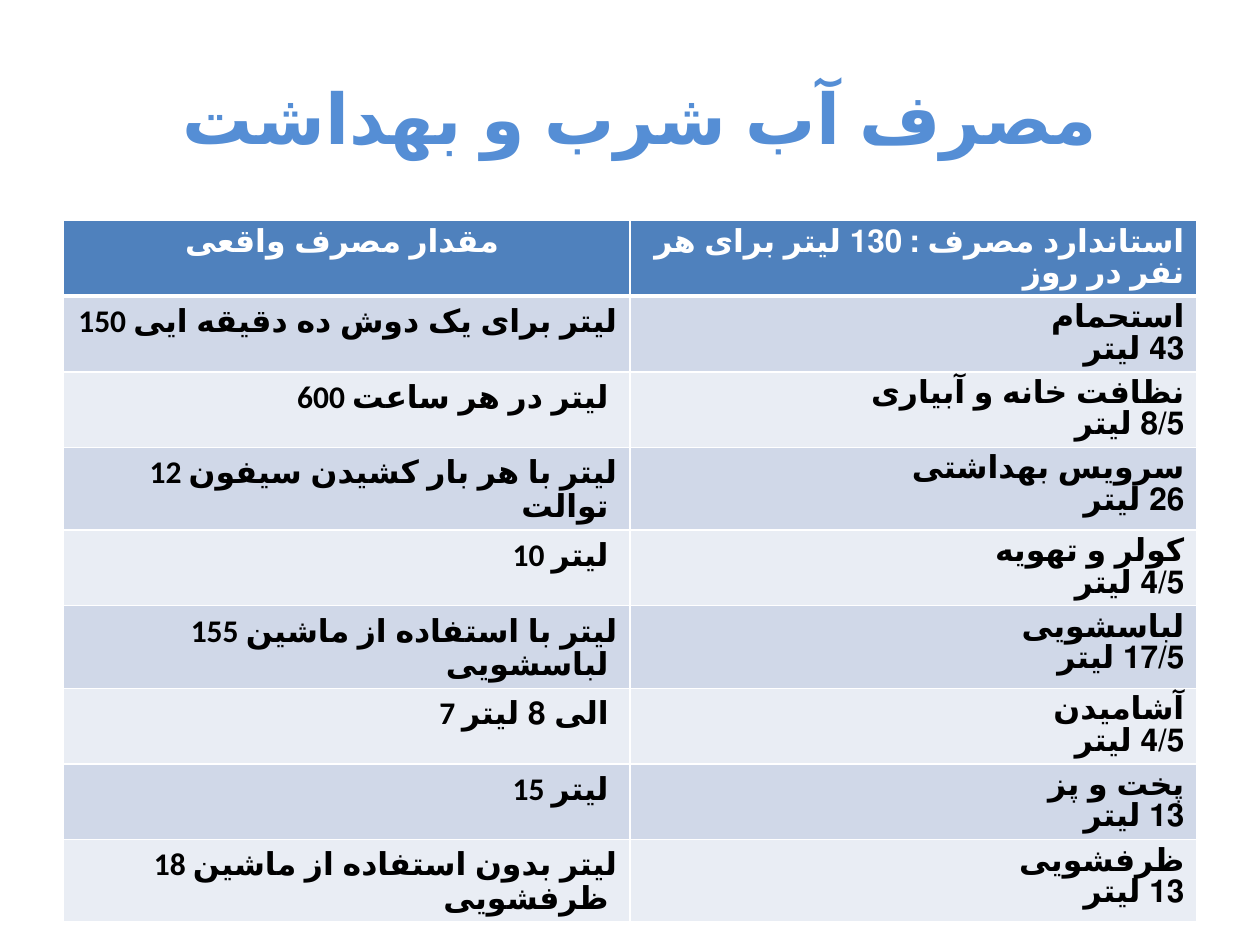
import pptx
import pptx.dml.color
import pptx.enum.lang
import pptx.enum.text
import pptx.oxml
import pptx.oxml.ns
import pptx.util

Pt = pptx.util.Pt
ALIGN = pptx.enum.text.PP_ALIGN
FARSI = pptx.enum.lang.MSO_LANGUAGE_ID.FARSI
FONT = "Calibri"
WHITE, BLACK = "FFFFFF", "000000"
TITLE_BLUE, HEADER_BLUE = "558ED5", "4F81BD"
BANDS = ("D0D8E8", "E9EDF4")

# Actual use, then the standard use of the same activity
HEADER = ("مقدار مصرف واقعی ", "استاندارد مصرف : 130 لیتر برای هر نفر در روز ")
USES = [
    ("150 لیتر برای یک دوش ده دقیقه ایی ", "استحمام", "43 لیتر"),
    ("600 لیتر در هر ساعت ", "نظافت خانه و آبیاری", "8/5 لیتر"),
    ("12 لیتر با هر بار کشیدن سیفون توالت ", "سرویس بهداشتی", "26 لیتر"),
    ("10 لیتر ", "کولر و تهویه", "4/5 لیتر"),
    ("155 لیتر با استفاده از ماشین لباسشویی ", "لباسشویی", "17/5 لیتر"),
    ("7 الی 8 لیتر ", "آشامیدن", "4/5 لیتر"),
    ("15 لیتر ", "پخت و پز", "13 لیتر"),
    ("18 لیتر بدون استفاده از ماشین ظرفشویی ", "ظرفشویی", "13 لیتر"),
]


def color(value):
    return pptx.dml.color.RGBColor.from_string(value)


def write(paragraph, text, size, ink, align, rtl=False):
    paragraph.text = text
    paragraph.alignment = align
    if rtl:
        paragraph._p.get_or_add_pPr().set("rtl", "1")
    font = paragraph.font
    font.name, font.size, font.bold = FONT, Pt(size), True
    font.color.rgb = color(ink)
    # The language steers the choice of Persian letterforms
    for run in paragraph.runs:
        run.font.language_id = FARSI


def add_border(cell, side, width):
    cell._tc.get_or_add_tcPr().append(pptx.oxml.parse_xml(
        f'<a:ln{side} {pptx.oxml.ns.nsdecls("a")} w="{Pt(width)}">'
        f'<a:solidFill><a:srgbClr val="{WHITE}"/></a:solidFill></a:ln{side}>'))


def fill_cell(cell, text, row, ink, fill, align, rtl):
    write(cell.text_frame.paragraphs[0], text, 18, ink, align, rtl)
    # A heavier line separates the header from the body
    widths = {"L": 1, "R": 1, "T": 3 if row == 1 else 1, "B": 3 if row == 0 else 1}
    for side, width in widths.items():
        add_border(cell, side, width)
    cell.fill.solid()
    cell.fill.fore_color.rgb = color(fill)


def add_title(slide):
    title = slide.shapes.title
    title.left, title.top, title.width, title.height = Pt(36), Pt(21.6), Pt(648), Pt(90)
    write(title.text_frame.paragraphs[0], "مصرف آب شرب و بهداشت ", 40,
          TITLE_BLUE, ALIGN.CENTER, rtl=True)


def add_usage_table(slide):
    table = slide.shapes.add_table(
        len(USES) + 1, 2, Pt(36), Pt(126), Pt(648), Pt(378)).table
    # Header row
    for column, text in enumerate(HEADER):
        fill_cell(table.cell(0, column), text, 0, WHITE, HEADER_BLUE,
                  (ALIGN.CENTER, ALIGN.RIGHT)[column], rtl=column == 1)
    # Banded body rows, with each standard amount under its activity
    for row, (actual, activity, amount) in enumerate(USES, start=1):
        for column, text in enumerate((actual, f"{activity}\v{amount}")):
            fill_cell(table.cell(row, column), text, row, BLACK,
                      BANDS[(row - 1) % 2], ALIGN.RIGHT, rtl=column == 1)


def main():
    deck = pptx.Presentation()
    deck.slide_width, deck.slide_height = Pt(720), Pt(540)
    slide = deck.slides.add_slide(deck.slide_layouts[5])
    add_title(slide)
    add_usage_table(slide)
    deck.save("out.pptx")


if __name__ == "__main__":
    main()
